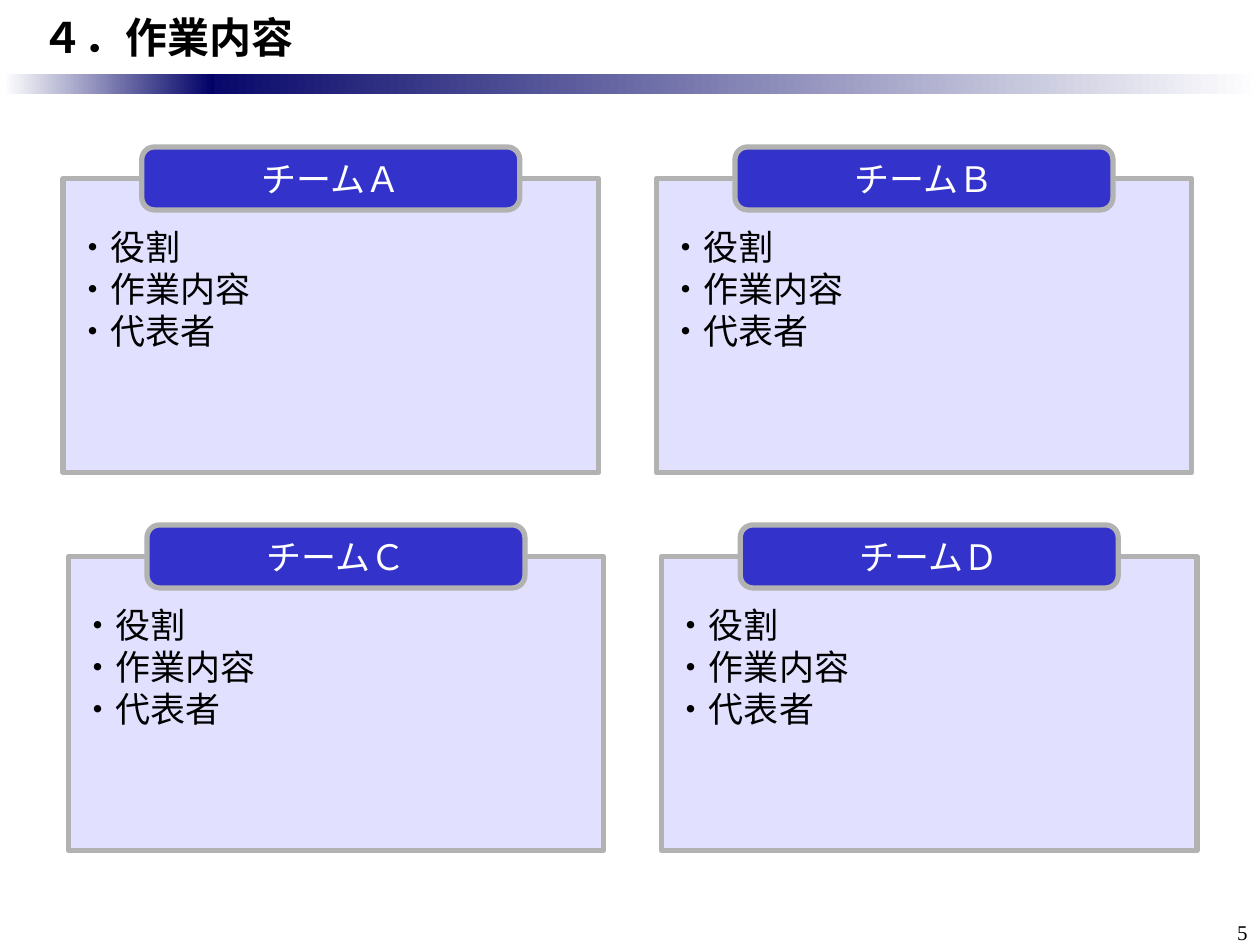
from dataclasses import dataclass

from lxml import etree
from pptx import Presentation, util as u
from pptx.dml.color import RGBColor
from pptx.enum import shapes, text
from pptx.oxml.ns import qn

PX = 9525  # one px in EMU, 96 px to the inch


@dataclass(frozen=True)
class Theme:
    navy: str = "000066"
    blue: str = "3333CC"
    lavender: str = "E1E1FF"
    gray: str = "B2B2B2"
    white: str = "FFFFFF"
    black: str = "000000"
    sans: str = "Noto Sans CJK JP"
    serif: str = "Times New Roman"
    title: int = 24
    body: int = 20
    number: int = 12
    border: int = 3


THEME = Theme()
TEAMS = ["チームＡ", "チームＢ", "チームＣ", "チームＤ"]
ITEMS = ["・役割", "・作業内容", "・代表者"]


def px(*lengths):
    return [u.Emu(length * PX) for length in lengths]


def set_values(target, values):
    for name, value in values.items():
        setattr(target, name, value)


def write(shape, lines, font, size, color, align, frame_format, bold=False):
    """Fill a shape with one paragraph per line."""
    frame = shape.text_frame
    set_values(frame, frame_format)
    for index, line in enumerate(lines):
        para = frame.add_paragraph() if index else frame.paragraphs[0]
        para.alignment = align
        span = para.add_run()
        span.text = line
        set_values(span.font, {"name": font, "size": u.Pt(size), "bold": bold})
        span.font.color.rgb = RGBColor.from_string(color)
        east_asian = etree.SubElement(span.font._element, qn("a:ea"))
        east_asian.set("typeface", THEME.sans)


def add_panel(page, kind, box, fill):
    """Add a filled shape with the gray border."""
    panel = page.shapes.add_shape(kind, *px(*box))
    panel.shadow.inherit = False
    panel.fill.solid()
    panel.fill.fore_color.rgb = RGBColor.from_string(fill)
    panel.line.color.rgb = RGBColor.from_string(THEME.gray)
    panel.line.width = u.Pt(THEME.border)
    return panel


def add_fade(page, box, colors):
    """Add a borderless bar that fades from left to right."""
    bar = page.shapes.add_shape(shapes.MSO_SHAPE.RECTANGLE, *px(*box))
    bar.shadow.inherit = False
    bar.line.fill.background()
    bar.fill.gradient()
    bar.fill.gradient_angle = 0
    for stop, position, color in zip(bar.fill.gradient_stops, (0, 1), colors):
        stop.position = position
        stop.color.rgb = RGBColor.from_string(color)


def add_header(page, box, heading):
    """Title with the two-part bar along its lower edge."""
    left, top, width, height = box
    bar_top, bar_height, peak = top + height, 16, left + 136
    add_fade(page, (peak, bar_top, left + width - peak, bar_height),
             (THEME.navy, THEME.white))
    add_fade(page, (left + 3, bar_top, 160, bar_height),
             (THEME.white, THEME.navy))

    title = page.shapes.title
    set_values(title, dict(zip(("left", "top", "width", "height"), px(*box))))
    write(title, [heading], THEME.sans, THEME.title, THEME.black,
          text.PP_ALIGN.LEFT,
          {"margin_left": u.Inches(0.33), "word_wrap": True,
           "auto_size": text.MSO_AUTO_SIZE.NONE,
           "vertical_anchor": text.MSO_ANCHOR.MIDDLE}, bold=True)


def add_team(page, box, name):
    """Team card: item panel with a name tab over its top edge."""
    left, top, width, height = box
    tab_height = 48
    body_top = top + tab_height // 2
    body = add_panel(page, shapes.MSO_SHAPE.RECTANGLE,
                     (left, body_top, width, height - tab_height // 2),
                     THEME.lavender)
    write(body, ITEMS, THEME.serif, THEME.body, THEME.black,
          text.PP_ALIGN.LEFT,
          {"margin_top": u.Inches(0.37), "word_wrap": False,
           "vertical_anchor": text.MSO_ANCHOR.TOP})

    tab = add_panel(page, shapes.MSO_SHAPE.ROUNDED_RECTANGLE,
                    (left + 60, top, 288, tab_height), THEME.blue)
    tab.adjustments[0] = 0.2
    write(tab, [name], THEME.sans, THEME.body, THEME.white,
          text.PP_ALIGN.CENTER,
          {"word_wrap": False, "vertical_anchor": text.MSO_ANCHOR.MIDDLE})


def add_teams(page, box):
    """Two by two cards, the lower row shifted slightly right."""
    left, top, width, height = box
    card_width, card_height, row_shift = 408, 248, 4
    column_step = width - row_shift - card_width
    row_step = height - card_height
    for index, name in enumerate(TEAMS):
        row, column = divmod(index, 2)
        add_team(page, (left + column * column_step + row * row_shift,
                        top + row * row_step, card_width, card_height), name)


def add_number(page, box, number):
    """Page number in the lower right corner."""
    label = page.shapes.add_textbox(*px(*box))
    write(label, [number], THEME.serif, THEME.number, THEME.black,
          text.PP_ALIGN.RIGHT, {"word_wrap": True})


def main():
    deck = Presentation()
    deck.slide_width, deck.slide_height = px(960, 720)
    page = deck.slides.add_slide(deck.slide_layouts[5])
    add_header(page, (0, 0, 960, 56), "４．作業内容")
    add_teams(page, (48, 112, 864, 536))
    add_number(page, (904, 696, 56, 24), "5")
    deck.save("out.pptx")


if __name__ == "__main__":
    main()
